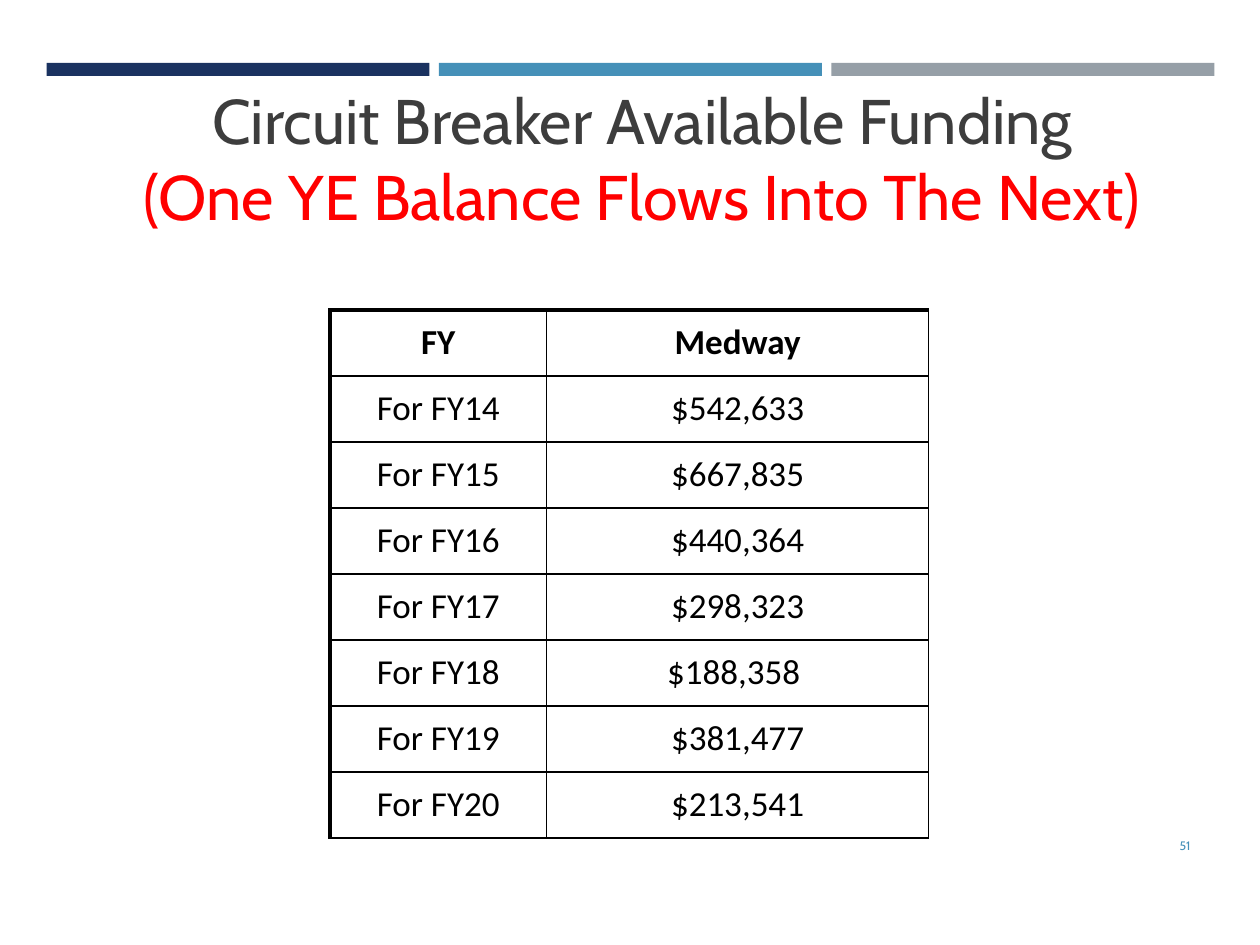
from lxml.etree import SubElement
from pptx import Presentation
from pptx.dml.color import RGBColor
from pptx.enum.shapes import MSO_SHAPE as Shape
from pptx.enum.text import MSO_ANCHOR as Anchor, MSO_AUTO_SIZE as AutoSize, PP_ALIGN as Align
from pptx.oxml.ns import qn
from pptx.util import Cm, Pt

COLOURS = {
    "navy": "1A3260", "blue": "4590B8", "grey": "969FA7",
    "title": "3D3D3D", "red": "FF0000", "black": "000000",
}
FUNDING = [
    ("FY", "Medway"),
    ("For FY14", "$542,633"),
    ("For FY15", "$667,835"),
    ("For FY16", "$440,364"),
    ("For FY17", "$298,323"),
    ("For FY18", "$188,358 "),
    ("For FY19", "$381,477"),
    ("For FY20", "$213,541"),
]


def colour(name):
    return RGBColor.from_string(COLOURS[name])


def write(paragraph, text, *, font, size, ink, bold=False, align=Align.CENTER):
    paragraph.alignment = align
    run = paragraph.add_run()
    run.text = text
    run.font.name = font
    run.font.size = Pt(size)
    run.font.bold = bold
    run.font.color.rgb = colour(ink)


def set_margins(target, across, down):
    target.margin_left = target.margin_right = Cm(across)
    target.margin_top = target.margin_bottom = Cm(down)


def draw_borders(cell, widths):
    """Draw the cell's edges; widths maps L, R, T and B to points."""
    properties = cell._tc.get_or_add_tcPr()
    for position, (side, width) in enumerate(widths.items()):
        edge = SubElement(properties, qn(f"a:ln{side}"), w=str(Pt(width)))
        fill = SubElement(edge, qn("a:solidFill"))
        SubElement(fill, qn("a:srgbClr"), val=COLOURS["black"])
        properties.insert(position, edge)


class SlideBuilder:
    heading_font = "Cabin"
    table_font = "Calibri"
    thin, thick = 1, 2.25

    def __init__(self, slide):
        self.slide = slide

    def bar(self, left, top, width, height, fill):
        bar = self.slide.shapes.add_shape(
            Shape.RECTANGLE, Cm(left), Cm(top), Cm(width), Cm(height))
        bar.shadow.inherit = False
        bar.fill.solid()
        bar.fill.fore_color.rgb = colour(fill)
        bar.line.fill.background()

    def title(self, left, top, width, height, lines):
        title = self.slide.shapes.title
        title.left, title.top = Cm(left), Cm(top)
        title.width, title.height = Cm(width), Cm(height)
        frame = title.text_frame
        frame.auto_size = AutoSize.NONE
        frame.vertical_anchor = Anchor.TOP
        set_margins(frame, 0.25, 0.13)
        for index, (text, ink) in enumerate(lines):
            paragraph = frame.add_paragraph() if index else frame.paragraphs[0]
            write(paragraph, text, font=self.heading_font, size=36, ink=ink)

    def table(self, left, top, column_widths, row_height, rows):
        table = self.slide.shapes.add_table(
            len(rows), len(column_widths), Cm(left), Cm(top),
            Cm(sum(column_widths)), Cm(row_height * len(rows))).table
        table.horz_banding = False
        for column, width in zip(table.columns, column_widths):
            column.width = Cm(width)
        for row_index, values in enumerate(rows):
            table.rows[row_index].height = Cm(row_height)
            for column_index, value in enumerate(values):
                cell = table.cell(row_index, column_index)
                cell.fill.background()
                cell.vertical_anchor = Anchor.MIDDLE
                set_margins(cell, 0, 0.13)
                write(cell.text_frame.paragraphs[0], value, font=self.table_font,
                      size=20, ink="black", bold=row_index == 0)
                draw_borders(cell, {
                    "L": self.thin if column_index else self.thick,
                    "R": self.thin,
                    "T": self.thin if row_index else self.thick,
                    "B": self.thin,
                })

    def page_number(self, left, top, width, height, number):
        frame = self.slide.shapes.add_textbox(
            Cm(left), Cm(top), Cm(width), Cm(height)).text_frame
        frame.word_wrap = True
        frame.vertical_anchor = Anchor.MIDDLE
        set_margins(frame, 0.18, 0.1)
        write(frame.paragraphs[0], number, font=self.heading_font, size=7,
              ink="blue", align=Align.RIGHT)


def main():
    deck = Presentation()
    deck.slide_width, deck.slide_height = Cm(25.4), Cm(19.05)
    title_only = deck.slide_layouts[5]
    builder = SlideBuilder(deck.slides.add_slide(title_only))

    for index, fill in enumerate(("navy", "blue", "grey")):
        builder.bar(0.94 + 7.91 * index, 1.27, 7.72, 0.26, fill)
    builder.title(1.96, 1.52, 21.97, 3.53, [
        ("Circuit Breaker Available Funding", "title"),
        ("(One YE Balance Flows Into The Next)", "red"),
    ])
    builder.table(6.65, 6.25, (4.37, 7.7), 1.33, FUNDING)
    builder.page_number(22, 16.54, 2.18, 1.02, "51")
    deck.save("out.pptx")


if __name__ == "__main__":
    main()
